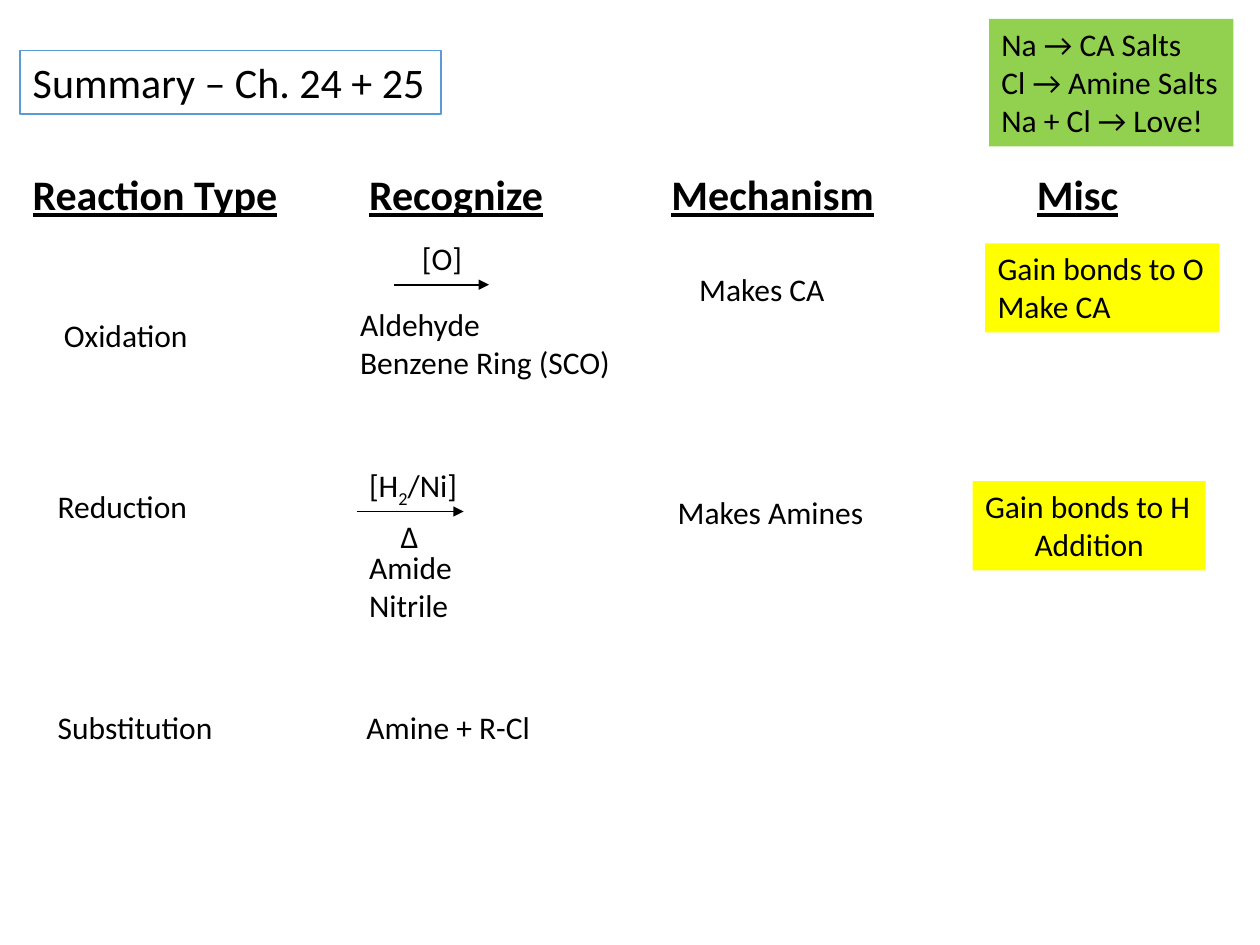
from lxml.etree import SubElement
from pptx import Presentation
from pptx.dml.color import RGBColor
from pptx.enum.shapes import MSO_CONNECTOR, MSO_SHAPE
from pptx.enum.text import MSO_ANCHOR, MSO_AUTO_SIZE, PP_ALIGN
from pptx.oxml.ns import qn
from pptx.util import Pt

BLACK, WHITE, BLUE = "000000", "FFFFFF", "5B9BD5"
GREEN, YELLOW = "92D050", "FFFF00"
BODY_SIZE, HEADING_SIZE = 18, 24
LINE_HEIGHT = {BODY_SIZE: 21.9, HEADING_SIZE: 29}

# Left, width and text of each column heading
HEADING_TOP = 93
HEADINGS = [
    (11.5, 156, "Reaction Type"),
    (203.8, 115, "Recognize"),
    (376.6, 132, "Mechanism"),
    (585.4, 61, "Misc"),
]

# Left, top, width and text of the plain table entries
ENTRIES = [
    (29.5, 177.1, 86, "Oxidation"),
    (198.7, 170.6, 159, "Aldehyde\nBenzene Ring (SCO)"),
    (392.4, 150.5, 87, "Makes CA"),
    (25.9, 275, 89, "Reduction"),
    (203.8, 309.6, 63, "Amide\nNitrile"),
    (380.2, 277.9, 122, "Makes Amines"),
    (25.9, 401, 104, "Substitution"),
    (202.3, 401, 109, "Amine + R-Cl"),
]


def color(hex_value):
    return RGBColor.from_string(hex_value)


def place(shape, left, top, width, height):
    shape.left, shape.top = Pt(left), Pt(top)
    shape.width, shape.height = Pt(width), Pt(height)


def box_height(text, size):
    return LINE_HEIGHT[size] * (text.count("\n") + 1) + 7.2


def format_text(text_frame, size, heading=False):
    text_frame.word_wrap = False
    text_frame.auto_size = MSO_AUTO_SIZE.NONE
    text_frame.vertical_anchor = MSO_ANCHOR.TOP
    for paragraph in text_frame.paragraphs:
        paragraph.alignment = PP_ALIGN.LEFT
        for run in paragraph.runs:
            run.font.name = "Calibri"
            run.font.size = Pt(size)
            run.font.color.rgb = color(BLACK)
            if heading:
                run.font.bold = run.font.underline = True


def add_label(shapes, left, top, width, text, size=BODY_SIZE, heading=False):
    label = shapes.add_textbox(Pt(left), Pt(top), Pt(width), Pt(box_height(text, size)))
    label.text_frame.text = text
    format_text(label.text_frame, size, heading)
    return label


def add_note(shapes, left, top, width, text, fill):
    note = shapes.add_shape(
        MSO_SHAPE.RECTANGLE, Pt(left), Pt(top), Pt(width), Pt(box_height(text, BODY_SIZE))
    )
    note.shadow.inherit = False
    note.fill.solid()
    note.fill.fore_color.rgb = color(fill)
    note.line.fill.background()
    note.text_frame.text = text
    format_text(note.text_frame, BODY_SIZE)
    return note


def add_arrow(shapes, left, top, width):
    arrow = shapes.add_connector(
        MSO_CONNECTOR.STRAIGHT, Pt(left), Pt(top), Pt(left + width), Pt(top)
    )
    arrow.line.color.rgb = color(BLACK)
    arrow.line.width = Pt(1)
    SubElement(arrow.line._get_or_add_ln(), qn("a:tailEnd"), type="triangle")
    SubElement(arrow._element.spPr, qn("a:effectLst"))


def add_title(slide, text):
    title = slide.shapes.title
    place(title, 11.5, 28.8, 240.5, box_height(text, HEADING_SIZE))
    title.fill.solid()
    title.fill.fore_color.rgb = color(WHITE)
    title.line.color.rgb = color(BLUE)
    title.line.width = Pt(1)
    title.text_frame.text = text
    format_text(title.text_frame, HEADING_SIZE)
    title.text_frame.paragraphs[0].line_spacing = 1.0
    title.text_frame.paragraphs[0].space_before = Pt(0)


def add_oxidation_conditions(slide):
    shapes = slide.shapes.add_group_shape().shapes
    add_arrow(shapes, 225.4, 162.7, 54)
    add_label(shapes, 234, 133.2, 37.4, "[O]")


def add_reduction_conditions(slide):
    shapes = slide.shapes.add_group_shape().shapes
    add_arrow(shapes, 203.8, 292.3, 61.2)
    reagent = add_label(shapes, 203.8, 262.8, 66.2, "[H")
    paragraph = reagent.text_frame.paragraphs[0]
    for text in ("2", "/Ni]"):
        paragraph.add_run().text = text
    format_text(reagent.text_frame, BODY_SIZE)
    paragraph.runs[1].font._element.set("baseline", "-25000")
    add_label(shapes, 221.8, 291.6, 24.5, "Δ")


def main():
    presentation = Presentation()
    presentation.slide_width, presentation.slide_height = Pt(720), Pt(540)
    slide = presentation.slides.add_slide(presentation.slide_layouts[5])
    shapes = slide.shapes

    # Title and column headings
    add_title(slide, "Summary – Ch. 24 + 25")
    for left, width, text in HEADINGS:
        add_label(shapes, left, HEADING_TOP, width, text, HEADING_SIZE, heading=True)

    # Reactions
    for entry in ENTRIES:
        add_label(shapes, *entry)
    add_oxidation_conditions(slide)
    add_reduction_conditions(slide)

    # Highlighted notes
    add_note(shapes, 565.2, 10.8, 139.7,
             "Na → CA Salts\nCl → Amine Salts\nNa + Cl → Love!", GREEN)
    add_note(shapes, 563, 139, 133.9, "Gain bonds to O\nMake CA", YELLOW)
    reduction_note = add_note(shapes, 555.8, 275, 133.2, "Gain bonds to H\nAddition", YELLOW)
    reduction_note.text_frame.paragraphs[1].alignment = PP_ALIGN.CENTER

    presentation.save("out.pptx")


if __name__ == "__main__":
    main()
